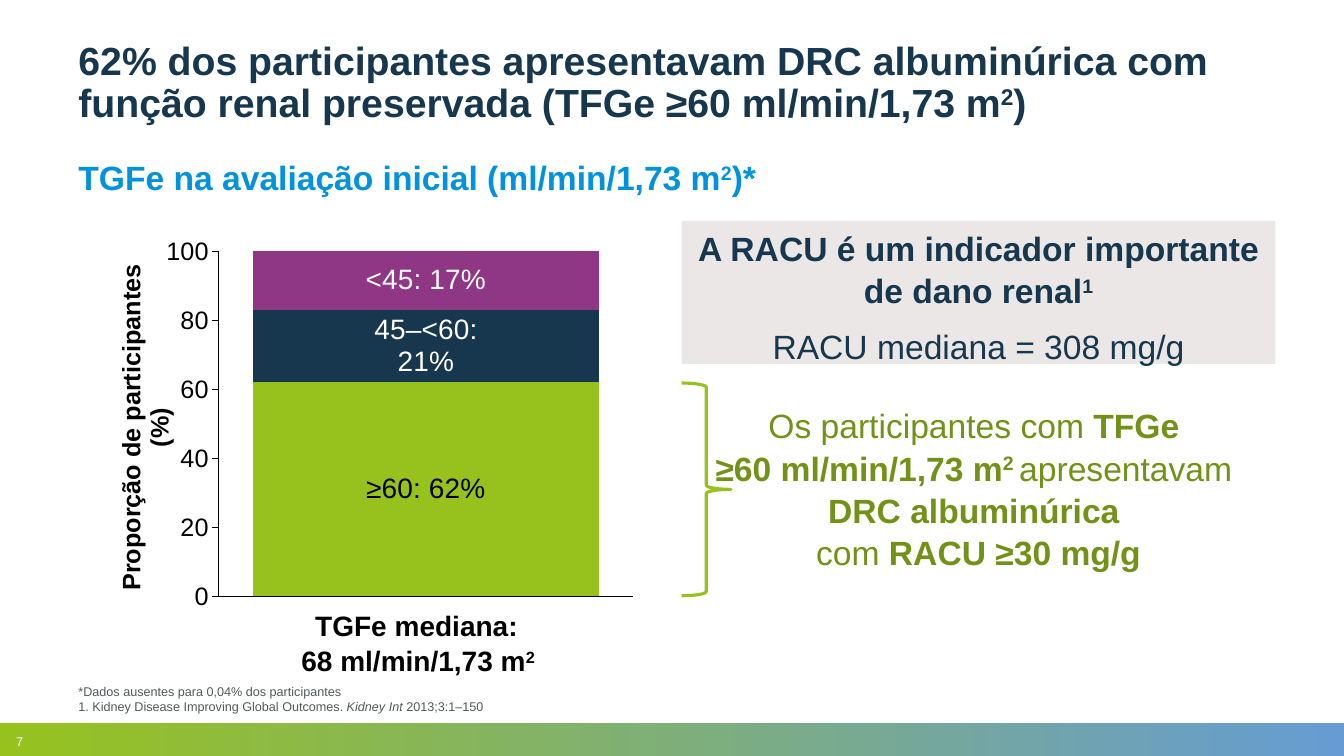
from lxml import etree
from pptx import Presentation
from pptx import util as u
from pptx.chart import data as chart_data
from pptx.dml.color import RGBColor
from pptx.enum import chart as ch
from pptx.enum import shapes, text
from pptx.oxml import ns

NAVY = RGBColor(0x16, 0x37, 0x4D)
BLUE = RGBColor(0x00, 0x91, 0xDF)
GREEN = RGBColor(0x97, 0xC2, 0x1E)
OLIVE = RGBColor(0x71, 0x92, 0x17)
PURPLE = RGBColor(0x8F, 0x36, 0x85)
SKY = RGBColor(0x66, 0x9C, 0xD3)
PALE = RGBColor(0xEA, 0xE7, 0xE6)
GREY = RGBColor(0x53, 0x58, 0x5A)
BLACK = RGBColor(0, 0, 0)
WHITE = RGBColor(0xFF, 0xFF, 0xFF)


def write(shape, paragraphs, size, color, frame_format=None, **paragraph_format):
    """Fill a shape; a run is (text, style) with b = bold, i = italic, ^ = superscript."""
    frame = shape.text_frame
    frame.word_wrap = True
    for name, value in (frame_format or {}).items():
        setattr(frame, name, value)
    for index, runs in enumerate(paragraphs):
        paragraph = frame.add_paragraph() if index else frame.paragraphs[0]
        for name, value in paragraph_format.items():
            if index or name != "space_before":
                setattr(paragraph, name, value)
        for content, style in runs:
            for line_index, line in enumerate(content.split("\n")):
                if line_index:
                    paragraph.add_line_break()
                if not line:
                    continue
                run = paragraph.add_run()
                run.text = line
                font_format = {"name": "Arial", "size": u.Pt(size),
                               "bold": "b" in style, "italic": "i" in style}
                for name, value in font_format.items():
                    setattr(run.font, name, value)
                run.font.color.rgb = color
                if "^" in style:
                    run._r.get_or_add_rPr().set("baseline", "30000")


def place(parent, **values):
    """Give a chart part a manual layout."""
    layout = parent.find(ns.qn("c:layout"))
    if layout is None:
        layout = etree.Element(ns.qn("c:layout"))
        parent.insert(0, layout)
    manual = etree.SubElement(layout, ns.qn("c:manualLayout"))
    for name, value in values.items():
        etree.SubElement(manual, ns.qn("c:" + name)).set("val", str(value))


presentation = Presentation()
presentation.slide_width = u.Inches(13.33)
presentation.slide_height = u.Inches(7.5)
slide = presentation.slides.add_slide(presentation.slide_layouts[6])
center = text.PP_ALIGN.CENTER
bottom = text.MSO_ANCHOR.BOTTOM

# Footer band, callout panel and brace
drawn = {}
for name, kind, box in [
    ("band", shapes.MSO_SHAPE.RECTANGLE, (0, 7.17, 13.33, 0.33)),
    ("callout", shapes.MSO_SHAPE.RECTANGLE, (6.76, 2.19, 5.89, 1.42)),
    ("brace", shapes.MSO_SHAPE.RIGHT_BRACE, (6.76, 3.8, 0.49, 2.11)),
]:
    shape = slide.shapes.add_shape(kind, *map(u.Inches, box))
    shape.shadow.inherit = False
    shape.line.fill.background()
    drawn[name] = shape

band_fill = drawn["band"].fill
band_fill.gradient()
band_fill.gradient_angle = 0
for stop, position, color in zip(band_fill.gradient_stops, (0, 1), (GREEN, SKY)):
    stop.position = position
    stop.color.rgb = color

drawn["callout"].fill.solid()
drawn["callout"].fill.fore_color.rgb = PALE
write(drawn["callout"],
      [[("A RACU é um indicador importante de dano renal", "b"), ("1", "b^")],
       [("RACU mediana = 308 mg/g", "")]],
      24, NAVY, {"vertical_anchor": text.MSO_ANCHOR.TOP},
      alignment=center, line_spacing=1.05, space_before=u.Pt(10))

drawn["brace"].fill.background()
drawn["brace"].line.color.rgb = GREEN
drawn["brace"].line.width = u.Pt(2.25)

# Stacked column chart
segments = [
    ("Series 1", 62, GREEN, "≥60: 62%", BLACK),
    ("Series 2", 21, NAVY, "45–<60: 21%", WHITE),
    ("Series 3", 17, PURPLE, "<45: 17%", WHITE),
]
shares = chart_data.CategoryChartData()
shares.categories = ["%"]
for name, share, *_ in segments:
    shares.add_series(name, [share])
chart = slide.shapes.add_chart(
    ch.XL_CHART_TYPE.COLUMN_STACKED,
    *map(u.Inches, (0.68, 2.19, 5.83, 4.32)), shares).chart
chart.has_legend = False
chart.has_title = False
chart.font.name = "Arial"
chart.font.size = u.Pt(18)
chart.font.color.rgb = BLACK

plot = chart.plots[0]
plot.gap_width = 20
plot.overlap = 100
plot.vary_by_categories = False
for series, (_, _, color, label, label_color) in zip(plot.series, segments):
    series.format.fill.solid()
    series.format.fill.fore_color.rgb = color
    data_label = series.points[0].data_label
    write(data_label, [[(label, "")]], 20, label_color)
    data_label.position = ch.XL_LABEL_POSITION.CENTER

# Axes
share_axis, category_axis = chart.value_axis, chart.category_axis
for name, value in {"minimum_scale": 0, "maximum_scale": 100, "major_unit": 20,
                    "has_major_gridlines": False,
                    "major_tick_mark": ch.XL_TICK_MARK.OUTSIDE}.items():
    setattr(share_axis, name, value)
category_axis.major_tick_mark = ch.XL_TICK_MARK.NONE
category_axis.tick_label_position = ch.XL_TICK_LABEL_POSITION.NONE
for axis in (share_axis, category_axis):
    axis.format.line.color.rgb = BLACK
    axis.format.line.width = u.Pt(0.75)
write(share_axis.axis_title, [[("Proporção de participantes (%)", "b")]], 18, BLACK,
      alignment=center)
place(share_axis.axis_title._element, xMode="edge", yMode="edge", x=0.07, y=0.09)
place(chart._chartSpace.chart.plotArea, layoutTarget="inner", xMode="edge",
      yMode="edge", x=0.255, y=0.07, w=0.706, h=0.793)

# Text boxes: position, paragraphs, size, colour, frame format, paragraph format
for box, paragraphs, size, color, frame_format, paragraph_format in [
    ((0.68, 0.36, 11.93, 1.05),
     [[("62% dos participantes apresentavam DRC albuminúrica com função renal "
        "preservada (TFGe ≥60 ml/min/1,73 m", "b"), ("2", "b^"), (")", "b")]],
     28, NAVY, {}, {"line_spacing": 0.9}),
    ((0.68, 1.55, 11.93, 0.51),
     [[("TGFe na avaliação inicial (ml/min/1,73 m", "b"), ("2", "b^"), (")*", "b")]],
     24, BLUE, {}, {"line_spacing": 0.9}),
    ((6.79, 3.95, 5.83, 1.75),
     [[("Os participantes com ", ""), ("TFGe \n≥60 ml/min/1,73 m", "b"), ("2 ", "b^"),
       ("apresentavam \n", ""), ("DRC albuminúrica \n", "b"), ("com ", ""),
       ("RACU ≥30 mg/g", "b")]],
     24, OLIVE, {}, {"alignment": center, "line_spacing": 1.05}),
    ((2.49, 5.97, 3.36, 0.77),
     [[("TGFe mediana: \n68 ml/min/1,73 m", "b"), ("2 ", "b^")]],
     20, BLACK, {}, {"alignment": center, "line_spacing": 1.05}),
    ((0.68, 6.58, 11.93, 0.55),
     [[("*Dados ausentes para 0,04% dos participantes", "")],
      [("1. Kidney Disease Improving Global Outcomes. ", ""), ("Kidney Int ", "i"),
       ("2013;3:1–150", "")]],
     9, GREY, {"vertical_anchor": bottom}, {}),
    ((0.16, 7.23, 0.41, 0.25), [[("7", "")]],
     9, WHITE, {"vertical_anchor": bottom, "margin_left": 0}, {}),
]:
    text_box = slide.shapes.add_textbox(*map(u.Inches, box))
    write(text_box, paragraphs, size, color, frame_format, **paragraph_format)

presentation.save("out.pptx")
